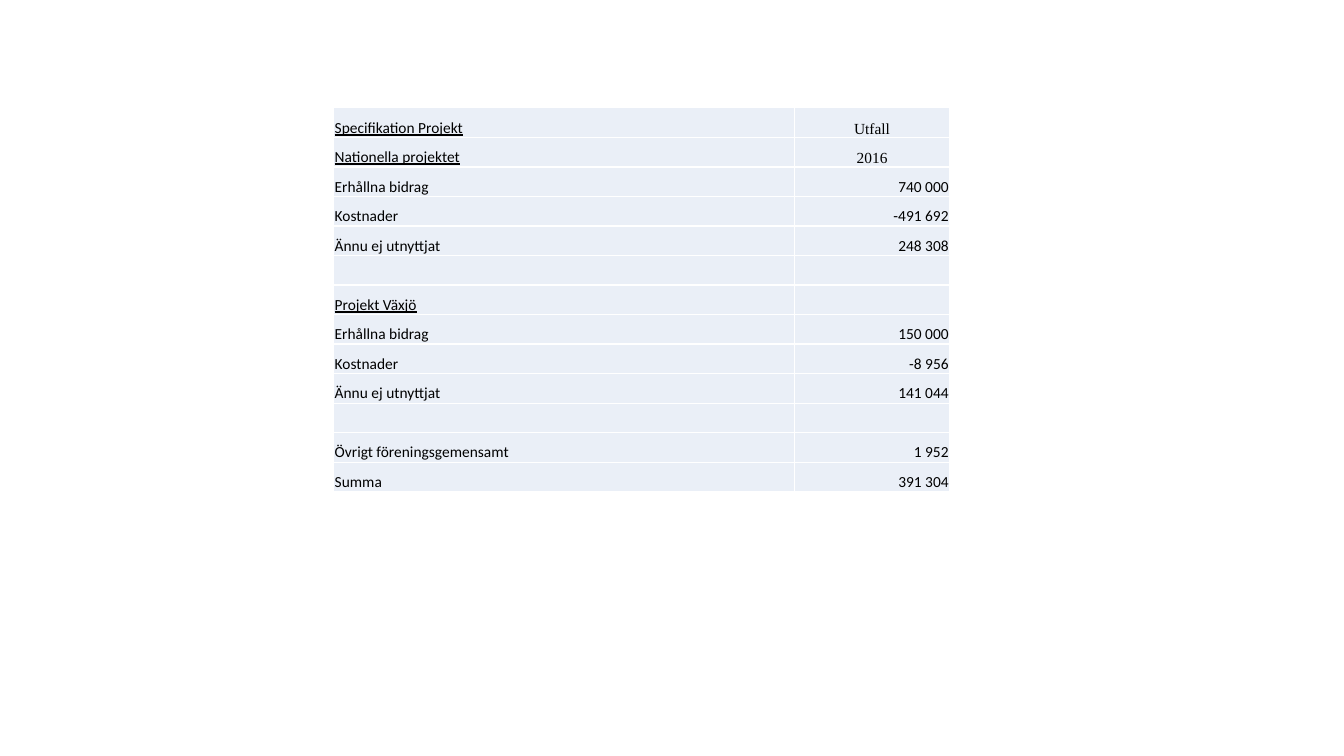
from lxml import etree
from pptx import Presentation
from pptx.dml.color import RGBColor
from pptx.enum.text import MSO_ANCHOR, PP_ALIGN
from pptx.oxml.ns import qn
from pptx.util import Inches, Pt

LEFT, CENTER, RIGHT = PP_ALIGN.LEFT, PP_ALIGN.CENTER, PP_ALIGN.RIGHT
BOTTOM = MSO_ANCHOR.BOTTOM

BLACK = RGBColor(0x00, 0x00, 0x00)
WHITE = RGBColor(0xFF, 0xFF, 0xFF)
PALE_BLUE = RGBColor(0xEA, 0xEF, 0xF7)

BODY_FONT = "Calibri"
HEADING_FONT = "Times New Roman"
TEXT_SIZE = Pt(11)
BORDER_WIDTH = Pt(1)
BLANK_LAYOUT = 6

COLUMN_WIDTHS = (4.57, 1.54)
TABLE_HEIGHT = 3.81
ROWS = (
    ("Specifikation Projekt", "Utfall"),
    ("Nationella projektet", "2016"),
    ("Erhållna bidrag", "740 000"),
    ("Kostnader", "-491 692"),
    ("Ännu ej utnyttjat", "248 308"),
    ("", ""),
    ("Projekt Växjö", ""),
    ("Erhållna bidrag", "150 000"),
    ("Kostnader", "-8 956"),
    ("Ännu ej utnyttjat", "141 044"),
    ("", ""),
    ("Övrigt föreningsgemensamt", "1 952"),
    ("Summa", "391 304"),
)
HEADING_ROWS = 2
UNDERLINED = {"Specifikation Projekt", "Nationella projektet", "Projekt Växjö"}


def add_borders(cell):
    properties = cell._tc.get_or_add_tcPr()
    for side in ("lnL", "lnR", "lnT", "lnB"):
        line = etree.SubElement(properties, qn(f"a:{side}"), w=str(BORDER_WIDTH))
        fill = etree.SubElement(line, qn("a:solidFill"))
        etree.SubElement(fill, qn("a:srgbClr"), val=str(WHITE))


def format_cell(cell):
    add_borders(cell)
    cell.fill.solid()
    cell.fill.fore_color.rgb = PALE_BLUE
    cell.vertical_anchor = BOTTOM
    cell.margin_left = cell.margin_right = cell.margin_top = Inches(0.01)
    cell.margin_bottom = 0


def write_text(cell, text, alignment, font_name):
    paragraph = cell.text_frame.paragraphs[0]
    if not text:
        # An empty cell takes its line height from the paragraph end mark.
        size = str(int(TEXT_SIZE.pt * 100))
        etree.SubElement(paragraph._p, qn("a:endParaRPr"), sz=size)
        return
    paragraph.text = text
    paragraph.alignment = alignment
    font = paragraph.font
    font.name = font_name
    font.size = TEXT_SIZE
    font.color.rgb = BLACK
    font.underline = text in UNDERLINED


def add_result_table(slide):
    table = slide.shapes.add_table(
        len(ROWS), len(COLUMN_WIDTHS), Inches(3.31), Inches(1.07),
        Inches(sum(COLUMN_WIDTHS)), Inches(TABLE_HEIGHT)).table
    table.first_row = False
    table.horz_banding = False
    for column, width in zip(table.columns, COLUMN_WIDTHS):
        column.width = Inches(width)
    for row_index, (label, amount) in enumerate(ROWS):
        label_cell, amount_cell = table.rows[row_index].cells
        format_cell(label_cell)
        format_cell(amount_cell)
        write_text(label_cell, label, LEFT, BODY_FONT)
        if row_index < HEADING_ROWS:
            write_text(amount_cell, amount, CENTER, HEADING_FONT)
        else:
            write_text(amount_cell, amount, RIGHT, BODY_FONT)


def main():
    presentation = Presentation()
    presentation.slide_width = Inches(13.33)
    presentation.slide_height = Inches(7.5)
    slide = presentation.slides.add_slide(presentation.slide_layouts[BLANK_LAYOUT])
    add_result_table(slide)
    presentation.save("out.pptx")


if __name__ == "__main__":
    main()
